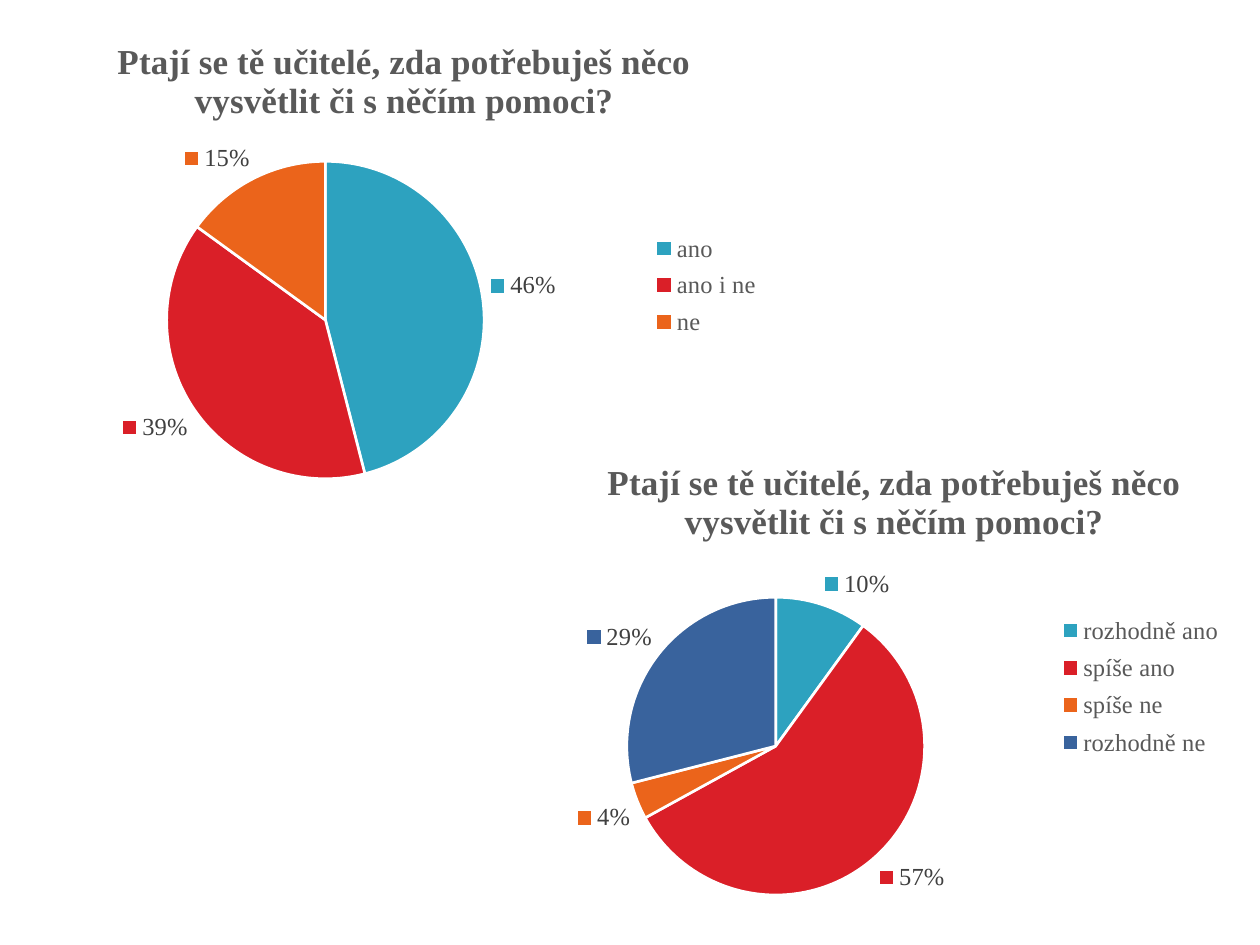
from lxml import etree
from pptx import Presentation
from pptx.chart.data import CategoryChartData
from pptx.dml.color import RGBColor
from pptx.enum.chart import XL_CHART_TYPE, XL_LABEL_POSITION, XL_LEGEND_POSITION
from pptx.oxml.ns import qn
from pptx.util import Pt

PIE = XL_CHART_TYPE.PIE
OUTSIDE = XL_LABEL_POSITION.OUTSIDE_END
RIGHT = XL_LEGEND_POSITION.RIGHT
SERIF = "Times New Roman"
COLOURS = {"teal": "2DA2BF", "red": "DA1F28", "orange": "EB641B", "blue": "39639D",
           "white": "FFFFFF", "grey": "595959", "dark": "404040", "black": "000000"}
SLICES = ["teal", "red", "orange", "blue"]
QUESTION = "Ptají se tě učitelé, zda potřebuješ něco vysvětlit či s\u00a0něčím pomoci?"
CHART_SIZE = (453.6, 283.7)
CHARTS = [
    {"at": (266.4, 247.7),
     "answers": {"rozhodně ano": 10, "spíše ano": 57, "spíše ne": 4, "rozhodně ne": 29},
     "title": (0.17, 0.04), "plot": (0.2, 0.33, 0.38, 0.6),
     "legend": (0.72, 0.35, 0.26, 0.32)},
    {"at": (0, 1.4),
     "answers": {"ano": 46, "ano i ne": 39, "ne": 15},
     "title": (0.14, 0.06), "plot": (0.21, 0.32, 0.4, 0.64),
     "legend": (0.8, 0.45, 0.18, 0.24)},
]


def colour(name):
    return RGBColor.from_string(COLOURS[name])


def set_font(font, size, shade, **values):
    for name, value in {"size": Pt(size), "name": SERIF, "bold": False, **values}.items():
        setattr(font, name, value)
    font.color.rgb = colour(shade)


def place(element, position, before, inner=False):
    for old in element.findall(qn("c:layout")):
        element.remove(old)
    layout = etree.Element(qn("c:layout"))
    manual = etree.SubElement(layout, qn("c:manualLayout"))
    values = {"layoutTarget": "inner"} if inner else {}
    values.update(xMode="edge", yMode="edge")
    values.update(zip("xywh", position))
    for name, value in values.items():
        etree.SubElement(manual, qn("c:" + name)).set("val", str(value))
    following = next(child for child in element if child.tag in map(qn, before))
    following.addprevious(layout)


def add_title(chart, position):
    title = chart.chart_title
    para = title.text_frame.paragraphs[0]
    span = para.add_run()
    span.text = QUESTION
    set_font(span.font, 20, "grey", bold=True)
    title.include_in_layout = False
    place(chart._chartSpace.chart.find(qn("c:title")), position, ["c:overlay"])


def add_legend(chart, position):
    chart.has_legend = True
    legend = chart.legend
    legend.position = RIGHT
    legend.include_in_layout = False
    set_font(legend.font, 14, "grey")
    place(chart._chartSpace.chart.find(qn("c:legend")), position, ["c:overlay"])


def style_slices(plot, count):
    plot.vary_by_categories = True
    series = plot.series[0]
    for index, shade in enumerate(SLICES[:count]):
        slice_format = series.points[index].format
        slice_format.fill.solid()
        slice_format.fill.fore_color.rgb = colour(shade)
        slice_format.line.color.rgb = colour("white")
        slice_format.line.width = Pt(1.5)


def add_labels(plot):
    plot.has_data_labels = True
    labels = plot.data_labels
    values = {"show_percentage": True, "show_value": False, "show_legend_key": True,
              "number_format": "0%", "number_format_is_linked": False, "position": OUTSIDE}
    for name, value in values.items():
        setattr(labels, name, value)
    set_font(labels.font, 14, "dark")


def add_pie(page, at, answers, title, plot, legend):
    data = CategoryChartData()
    data.categories = list(answers)
    data.add_series("Series 1", list(answers.values()))
    box = [Pt(length) for length in (*at, *CHART_SIZE)]
    chart = page.shapes.add_chart(PIE, *box, data).chart
    set_font(chart.font, 10, "black", name="Cambria")
    add_title(chart, title)
    add_legend(chart, legend)
    style_slices(chart.plots[0], len(answers))
    add_labels(chart.plots[0])
    place(chart._chartSpace.chart.plotArea, plot, ["c:pieChart"], inner=True)


def main():
    deck = Presentation()
    deck.slide_width, deck.slide_height = Pt(720), Pt(540)
    page = deck.slides.add_slide(deck.slide_layouts[6])
    for settings in CHARTS:
        add_pie(page, **settings)
    deck.save("out.pptx")


if __name__ == "__main__":
    main()
